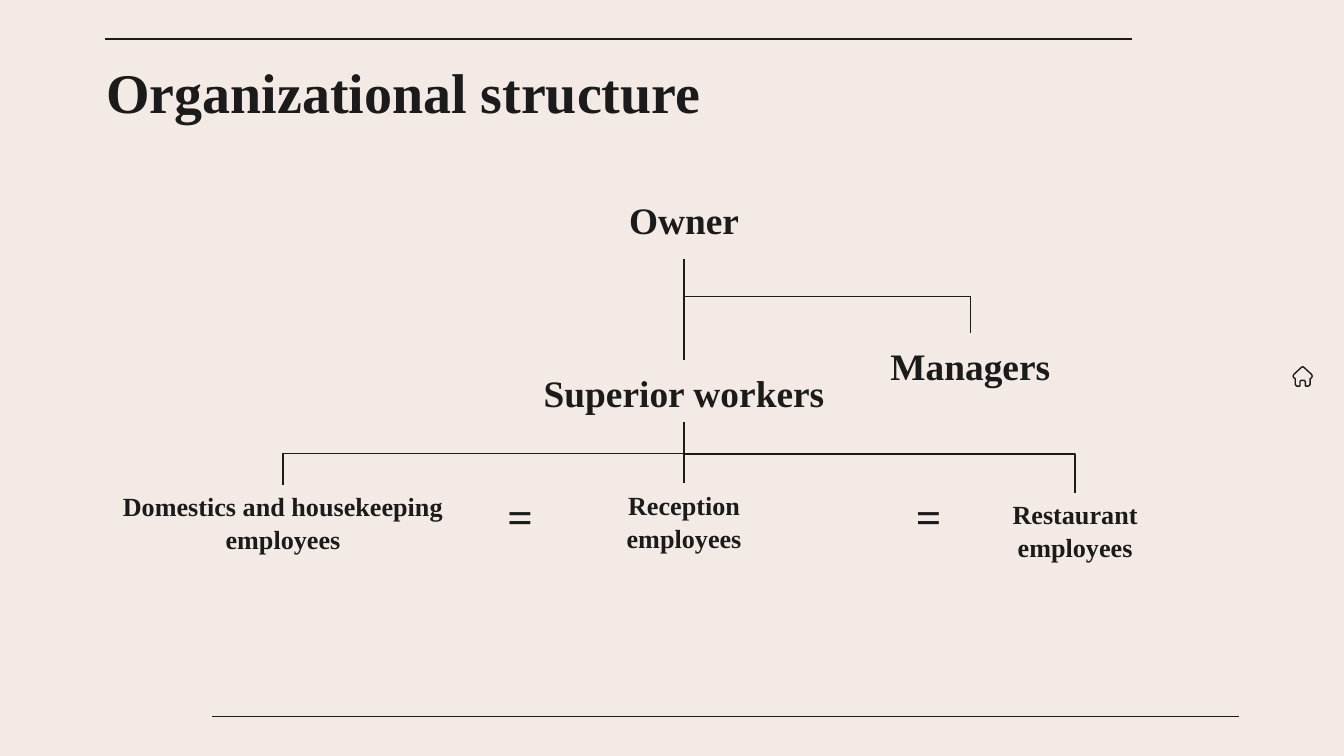
from dataclasses import dataclass

from lxml.etree import SubElement
from pptx import Presentation
from pptx.dml.color import RGBColor
from pptx.enum.shapes import MSO_CONNECTOR
from pptx.enum.text import MSO_ANCHOR, PP_ALIGN
from pptx.oxml.ns import qn
from pptx.util import Cm, Pt


@dataclass(frozen=True)
class Theme:
    paper: RGBColor = RGBColor(0xF4, 0xEA, 0xE5)
    ink: RGBColor = RGBColor(0x1B, 0x1B, 0x1B)
    font: str = "Times New Roman"
    title: int = 30
    sign: int = 24
    leader: int = 20
    team: int = 14
    line: float = 0.75


@dataclass(frozen=True)
class Node:
    text: str
    center: float
    top: float
    width: float
    height: float
    size: int


@dataclass(frozen=True)
class Link:
    parent: str
    child: str
    bend: float = 0.5


THEME = Theme()
AXIS = 12.93
BOTTOM, TOP = 2, 0

NODES = [
    Node("Owner", AXIS, 3.35, 5.13, 1.55, THEME.leader),
    Node("Managers", 18.34, 6.3, 8, 1.17, THEME.leader),
    Node("Superior workers", AXIS, 6.81, 8, 1.17, THEME.leader),
    Node("Domestics and housekeeping employees", 5.35, 9.17, 7.85, 1.4, THEME.team),
    Node("Reception employees", AXIS, 9.14, 4.78, 1.4, THEME.team),
    Node("Restaurant employees", 20.32, 9.32, 5.1, 1.4, THEME.team),
]
SIGNS = [Node("=", center, 8.84, 2.24, 1.75, THEME.sign) for center in (9.83, 17.55)]
LINKS = [
    Link("Owner", "Managers"),
    Link("Owner", "Superior workers"),
    Link("Superior workers", "Domestics and housekeeping employees"),
    Link("Superior workers", "Reception employees"),
    Link("Superior workers", "Restaurant employees", 0.45),
]
HOUSE_HALF = [(0, 0), (3, 2), (17, 15), (18, 18), (17, 21), (14, 23), (14, 34),
              (11, 37), (6, 37), (5, 36), (5, 28), (3, 26), (0, 26)]


def add_text(slide, text: str, left: float, top: float, width: float, height: float, *,
             size: int, align=PP_ALIGN.CENTER, anchor=MSO_ANCHOR.MIDDLE,
             inset: float = 0.25, spacing: float = 1.05):
    sp = slide.shapes.add_textbox(Cm(left), Cm(top), Cm(width), Cm(height))
    tf = sp.text_frame
    tf.word_wrap = True
    tf.vertical_anchor = anchor
    tf.margin_left = tf.margin_right = tf.margin_top = tf.margin_bottom = Cm(inset)
    p = tf.paragraphs[0]
    p.alignment = align
    p.line_spacing = spacing
    r = p.add_run()
    r.text = text
    r.font.name = THEME.font
    r.font.size = Pt(size)
    r.font.bold = True
    r.font.color.rgb = THEME.ink
    return sp


def add_node(slide, node: Node):
    return add_text(slide, node.text, node.center - node.width / 2, node.top,
                    node.width, node.height, size=node.size)


def ink_line(sp) -> None:
    sp.line.color.rgb = THEME.ink
    sp.line.width = Pt(THEME.line)


def add_line(slide, kind, x1: float = 0, y1: float = 0, x2: float = 0, y2: float = 0):
    cxn = slide.shapes.add_connector(kind, Cm(x1), Cm(y1), Cm(x2), Cm(y2))
    ink_line(cxn)
    SubElement(cxn._element.spPr, qn("a:effectLst"))
    return cxn


def turn_down(cxn, bend: float) -> None:
    dx = cxn.end_x - cxn.begin_x
    dy = cxn.end_y - cxn.begin_y
    mid_x = (cxn.begin_x + cxn.end_x) // 2
    mid_y = (cxn.begin_y + cxn.end_y) // 2
    cxn.width, cxn.height = dy, abs(dx)
    cxn.left, cxn.top = mid_x - dy // 2, mid_y - abs(dx) // 2
    xfrm = cxn._element.spPr.xfrm
    xfrm.flipH = dx > 0
    xfrm.rot = 270 if dx > 0 else 90
    geom = cxn._element.spPr.find(qn("a:prstGeom"))
    guides = geom.find(qn("a:avLst"))
    SubElement(guides, qn("a:gd"), name="adj1", fmla=f"val {round(bend * 100000)}")


def add_link(slide, link: Link, boxes: dict) -> None:
    parent, child = boxes[link.parent], boxes[link.child]
    straight = parent.left + parent.width // 2 == child.left + child.width // 2
    cxn = add_line(slide, MSO_CONNECTOR.STRAIGHT if straight else MSO_CONNECTOR.ELBOW)
    cxn.begin_connect(parent, BOTTOM)
    cxn.end_connect(child, TOP)
    if not straight:
        turn_down(cxn, link.bend)


def add_house(slide, center: float, top: float) -> None:
    outline = HOUSE_HALF + [(-x, y) for x, y in reversed(HOUSE_HALF[1:-1])]
    builder = slide.shapes.build_freeform(*outline[0], scale=Cm(0.01))
    builder.add_line_segments(outline[1:], close=True)
    sp = builder.convert_to_shape(Cm(center), Cm(top))
    sp.shadow.inherit = False
    sp.fill.background()
    ink_line(sp)


def main() -> None:
    prs = Presentation()
    prs.slide_width, prs.slide_height = Cm(25.4), Cm(14.29)
    slide = prs.slides.add_slide(prs.slide_layouts[6])
    slide.background.fill.solid()
    slide.background.fill.fore_color.rgb = THEME.paper

    for left, y in ((1.98, 0.74), (4.01, 13.54)):
        add_line(slide, MSO_CONNECTOR.STRAIGHT, left, y, left + 19.41, y)
    add_text(slide, "Organizational structure", 2.01, 1.09, 21.41, 1.27, size=THEME.title,
             align=PP_ALIGN.LEFT, anchor=MSO_ANCHOR.BOTTOM, inset=0, spacing=1)

    boxes = {node.text: add_node(slide, node) for node in NODES}
    for sign in SIGNS:
        add_node(slide, sign)
    for link in LINKS:
        add_link(slide, link, boxes)
    add_house(slide, 24.62, 6.93)
    prs.save("out.pptx")


if __name__ == "__main__":
    main()
